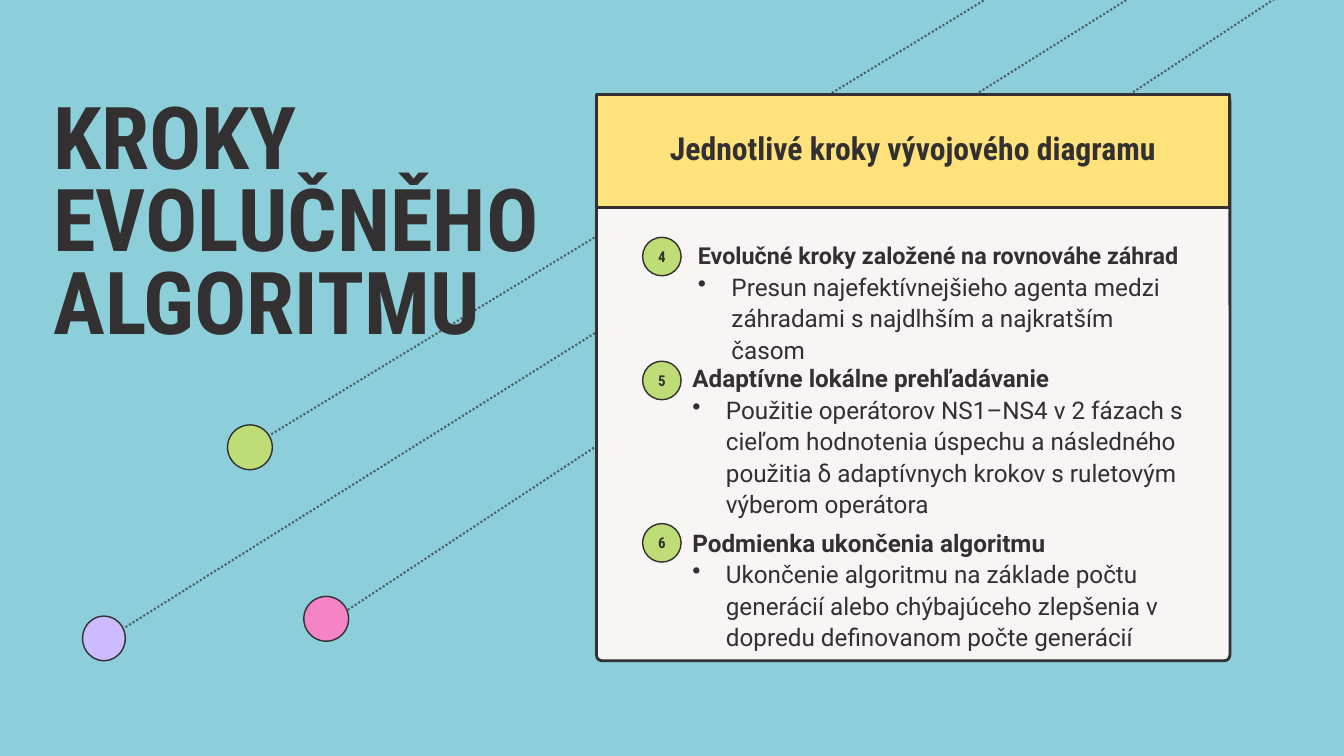
"""Build the slide on steps 4 to 6 of the evolutionary algorithm."""
import pptx
import pptx.dml.color
import pptx.enum.dml
import pptx.enum.shapes
import pptx.enum.text
import pptx.oxml
import pptx.oxml.ns
import pptx.util
from lxml import etree

PX = 9525
INK = "323030"
LIME = "BFDD76"
ALIGN = pptx.enum.text.PP_ALIGN
SHAPE = pptx.enum.shapes.MSO_SHAPE
qn = pptx.oxml.ns.qn


def color(value):
    return pptx.dml.color.RGBColor.from_string(value)


def style(paragraph, font_name, size, spacing, bold=True, align=ALIGN.LEFT):
    font = paragraph.font
    font.name, font.size, font.bold = font_name, pptx.util.Pt(size), bold
    font.color.rgb = color(INK)
    paragraph.alignment = align
    paragraph.space_before = pptx.util.Pt(0)
    if spacing:
        paragraph.line_spacing = pptx.util.Pt(spacing)


deck = pptx.Presentation()
deck.slide_width, deck.slide_height = 1920 * PX, 1080 * PX
slide = deck.slides.add_slide(deck.slide_layouts[5])
slide.background.fill.solid()
slide.background.fill.fore_color.rgb = color("8CCFDB")
shapes = slide.shapes

for ends in [(357, 639, 1707, -183), (149, 915, 1716, -67), (467, 891, 1920, -67)]:
    trail = shapes.add_connector(
        pptx.enum.shapes.MSO_CONNECTOR.STRAIGHT, *[end * PX for end in ends])
    trail.line.width = pptx.util.Pt(2.25)
    trail.line.color.rgb = color(INK)
    trail.line.dash_style = pptx.enum.dml.MSO_LINE.ROUND_DOT
    ink = trail.line.fill._xPr.find(".//" + qn("a:srgbClr"))
    etree.SubElement(ink, qn("a:alpha"), val="70000")
    etree.SubElement(trail.element.spPr, qn("a:effectLst"))

title = shapes.title
title.element.getparent().append(title.element)
title.left, title.top, title.width, title.height = [n * PX for n in (76, 149, 707, 357)]
title.text_frame.text = "KROKY EVOLUČNĚHO ALGORITMU"
style(title.text_frame.paragraphs[0], "Roboto Condensed", 93, 88.3)

outlined = [
    (SHAPE.OVAL, 118, 880, 61, 64, "CDBBFF", 1.5, ""),
    (SHAPE.OVAL, 325, 607, 64, 64, LIME, 1.5, ""),
    (SHAPE.OVAL, 434, 852, 64, 64, "F584C6", 1.5, ""),
    (SHAPE.ROUNDED_RECTANGLE, 852, 135, 905, 809, "F8F6F4", 3, ""),
    (SHAPE.RECTANGLE, 852, 135, 905, 161, "FFE27C", 3, ""),
    (SHAPE.OVAL, 918, 339, 55, 55, LIME, 1.5, "4"),
    (SHAPE.OVAL, 918, 516, 55, 55, LIME, 1.5, "5"),
    (SHAPE.OVAL, 918, 748, 55, 55, LIME, 1.5, "6"),
]
frames = [title.text_frame]
for kind, left, top, width, height, fill, weight, label in outlined:
    part = shapes.add_shape(kind, left * PX, top * PX, width * PX, height * PX)
    part.shadow.inherit = False
    part.fill.solid()
    part.fill.fore_color.rgb = color(fill)
    part.line.color.rgb = color(INK)
    part.line.width = pptx.util.Pt(weight)
    if kind == SHAPE.ROUNDED_RECTANGLE:
        part.adjustments[0] = 0.01
    if label:
        part.text_frame.text = label
        style(part.text_frame.paragraphs[0], "Roboto Condensed", 16, 19.2,
              align=ALIGN.CENTER)
        part.text_frame.vertical_anchor = pptx.enum.text.MSO_ANCHOR.MIDDLE
        part.text_frame.margin_left = part.text_frame.margin_right = 0
        part.text_frame.margin_top = part.text_frame.margin_bottom = 0

heading = shapes.add_textbox(900 * PX, 196 * PX, 808 * PX, 44 * PX)
heading.text_frame.text = "Jednotlivé kroky vývojového diagramu"
style(heading.text_frame.paragraphs[0], "Roboto Condensed", 34, 32.3, align=ALIGN.CENTER)
frames.append(heading.text_frame)

steps = [
    (997, 340, 702, 180, 25, 33.8, "Evolučné kroky založené na rovnováhe záhrad",
     "Presun najefektívnejšieho agenta medzi záhradami s najdlhším a najkratším časom"),
    (989, 519, 710, 227, 26, None, "Adaptívne lokálne prehľadávanie",
     "Použitie operátorov NS1–NS4 v 2 fázach s cieľom hodnotenia úspechu a následného "
     "použitia δ adaptívnych krokov s ruletovým výberom operátora"),
    (989, 751, 702, 180, 26, 33.8, "Podmienka ukončenia algoritmu",
     "Ukončenie algoritmu na základe počtu generácií alebo chýbajúceho zlepšenia "
     "v dopredu definovanom počte generácií"),
]
for left, top, width, height, size, spacing, name, detail in steps:
    step = shapes.add_textbox(left * PX, top * PX, width * PX, height * PX)
    step.text_frame.text = name
    style(step.text_frame.paragraphs[0], "Roboto", size, spacing)
    bullet = step.text_frame.add_paragraph()
    bullet.text = detail
    style(bullet, "Roboto", 26, 33.8, bold=False)
    properties = bullet._p.get_or_add_pPr()
    properties.set("marL", str(48 * PX))
    properties.set("indent", str(-48 * PX))
    mark = pptx.oxml.parse_xml(
        '<a:buChar xmlns:a="http://schemas.openxmlformats.org/drawingml/2006/main" char="•"/>')
    properties.find(qn("a:defRPr")).addprevious(mark)
    frames.append(step.text_frame)

for frame in frames:
    frame.word_wrap = True
    frame.auto_size = pptx.enum.text.MSO_AUTO_SIZE.NONE
    frame.vertical_anchor = pptx.enum.text.MSO_ANCHOR.TOP
    frame.margin_left = frame.margin_right = frame.margin_top = frame.margin_bottom = 0

deck.save("out.pptx")
